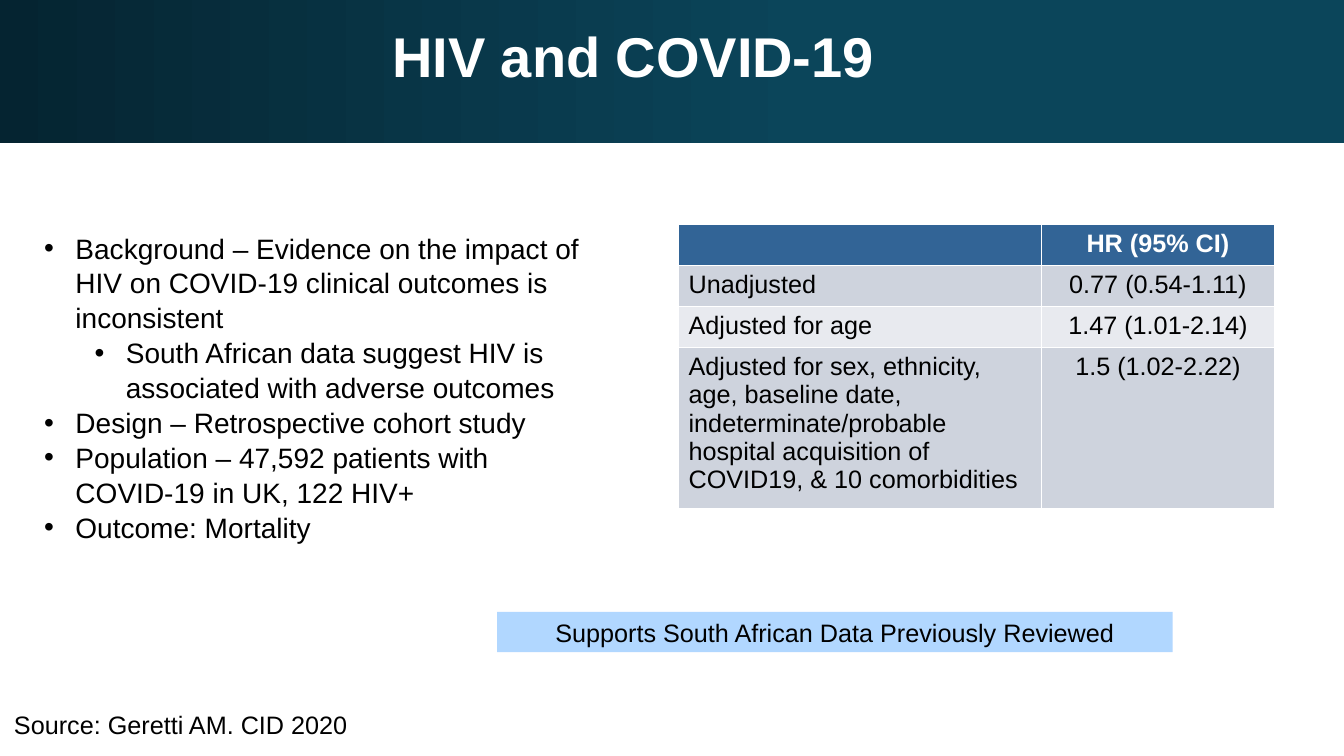
from pptx import Presentation
from pptx.dml.color import RGBColor
from pptx.enum.shapes import MSO_SHAPE as Shape
from pptx.enum.text import MSO_ANCHOR as Anchor, PP_ALIGN as Align
from pptx.oxml.ns import qn
from pptx.util import Inches, Pt
from lxml.etree import SubElement

TITLE = "HIV and COVID-19"
SOURCE = "Source: Geretti AM. CID 2020"
CONCLUSION = "Supports South African Data Previously Reviewed"
STUDY_POINTS = [
    (0, "Background – Evidence on the impact of HIV on COVID-19 clinical outcomes is inconsistent"),
    (1, "South African data suggest HIV is associated with adverse outcomes"),
    (0, "Design – Retrospective cohort study"),
    (0, "Population – 47,592 patients with COVID-19 in UK, 122 HIV+"),
    (0, "Outcome: Mortality"),
]
HAZARD_RATIOS = [
    ("", "HR (95% CI)"),
    ("Unadjusted", "0.77 (0.54-1.11)"),
    ("Adjusted for age", "1.47 (1.01-2.14)"),
    ("Adjusted for sex, ethnicity, age, baseline date, indeterminate/probable "
     "hospital acquisition of COVID19, & 10 comorbidities", "1.5 (1.02-2.22)"),
]
COLUMN_WIDTHS = (3.6, 2.31)
ROW_HEIGHTS = (0.4, 0.41, 0.41, 1.59)

THEME = {
    "font": "Arial",
    "title": 40, "body": 20, "small": 18,
    "white": "FFFFFF", "black": "000000",
    "band": (("052431", 0), ("0B455A", 0.6)),
    "header": "326496", "stripes": ("E8EAEF", "CED3DD"),
    "conclusion": "B1D7FF",
}


def rgb(name):
    return RGBColor.from_string(THEME.get(name, name))


def box(left, top, width, height):
    return [Inches(value) for value in (left, top, width, height)]


def write(paragraph, text, size="small", color="black", bold=False, align=Align.LEFT):
    paragraph.alignment = align
    if not text:
        return
    run = paragraph.add_run()
    run.text = text
    font_format = {"name": THEME["font"], "size": Pt(THEME[size]), "bold": bold}
    for attribute, value in font_format.items():
        setattr(run.font, attribute, value)
    run.font.color.rgb = rgb(color)


def add_bullet(paragraph, level):
    paragraph.level = level
    properties = paragraph._p.get_or_add_pPr()
    properties.set("marL", str(Inches(0.31 + 0.5 * level)))
    properties.set("indent", str(Inches(-0.31)))
    SubElement(properties, qn("a:buFont"), typeface=THEME["font"])
    SubElement(properties, qn("a:buChar"), char="•")
    paragraph.line_spacing = 1.04


def add_rectangle(slide, place):
    rectangle = slide.shapes.add_shape(Shape.RECTANGLE, *place)
    rectangle.shadow.inherit = False
    rectangle.line.fill.background()
    return rectangle


def add_text_frame(slide, place):
    frame = slide.shapes.add_textbox(*place).text_frame
    frame.word_wrap = True
    return frame


def add_title(slide):
    band = add_rectangle(slide, box(0, 0, 13.33, 1.42))
    band.fill.gradient()
    band.fill.gradient_angle = 0
    for stop, (color, position) in zip(band.fill.gradient_stops, THEME["band"]):
        stop.color.rgb = rgb(color)
        stop.position = position
    title = slide.shapes.title
    band._element.addnext(title._element)
    title.left, title.top, title.width, title.height = box(2.26, 0.11, 8.04, 1)
    frame = title.text_frame
    frame_format = {"vertical_anchor": Anchor.TOP, "margin_top": Inches(0.1), "word_wrap": True}
    for attribute, value in frame_format.items():
        setattr(frame, attribute, value)
    write(frame.paragraphs[0], TITLE, "title", "white", True, Align.CENTER)


def add_study_points(slide):
    frame = add_text_frame(slide, box(0.34, 2.23, 5.71, 3.13))
    for index, (level, text) in enumerate(STUDY_POINTS):
        paragraph = frame.add_paragraph() if index else frame.paragraphs[0]
        add_bullet(paragraph, level)
        write(paragraph, text, "body")


def add_hazard_ratios(slide):
    place = box(6.73, 2.23, sum(COLUMN_WIDTHS), sum(ROW_HEIGHTS))
    table = slide.shapes.add_table(len(ROW_HEIGHTS), len(COLUMN_WIDTHS), *place).table
    for column, width in zip(table.columns, COLUMN_WIDTHS):
        column.width = Inches(width)
    for row_index, values in enumerate(HAZARD_RATIOS):
        table.rows[row_index].height = Inches(ROW_HEIGHTS[row_index])
        is_header = row_index == 0
        fill = "header" if is_header else THEME["stripes"][row_index % 2]
        for column_index, text in enumerate(values):
            cell = table.cell(row_index, column_index)
            cell.fill.solid()
            cell.fill.fore_color.rgb = rgb(fill)
            write(cell.text_frame.paragraphs[0], text, "small",
                  "white" if is_header else "black", is_header,
                  Align.CENTER if column_index else Align.LEFT)


def add_conclusion(slide):
    conclusion = add_rectangle(slide, box(4.93, 6.07, 6.7, 0.4))
    conclusion.fill.solid()
    conclusion.fill.fore_color.rgb = rgb("conclusion")
    conclusion.text_frame.word_wrap = True
    write(conclusion.text_frame.paragraphs[0], CONCLUSION, align=Align.CENTER)


def main():
    deck = Presentation()
    deck.slide_width, deck.slide_height = Inches(13.33), Inches(7.5)
    slide = deck.slides.add_slide(deck.slide_layouts.get_by_name("Title Only"))
    add_title(slide)
    write(add_text_frame(slide, box(0.04, 6.99, 7.85, 0.4)).paragraphs[0], SOURCE)
    add_study_points(slide)
    add_hazard_ratios(slide)
    add_conclusion(slide)
    deck.save("out.pptx")


if __name__ == "__main__":
    main()
